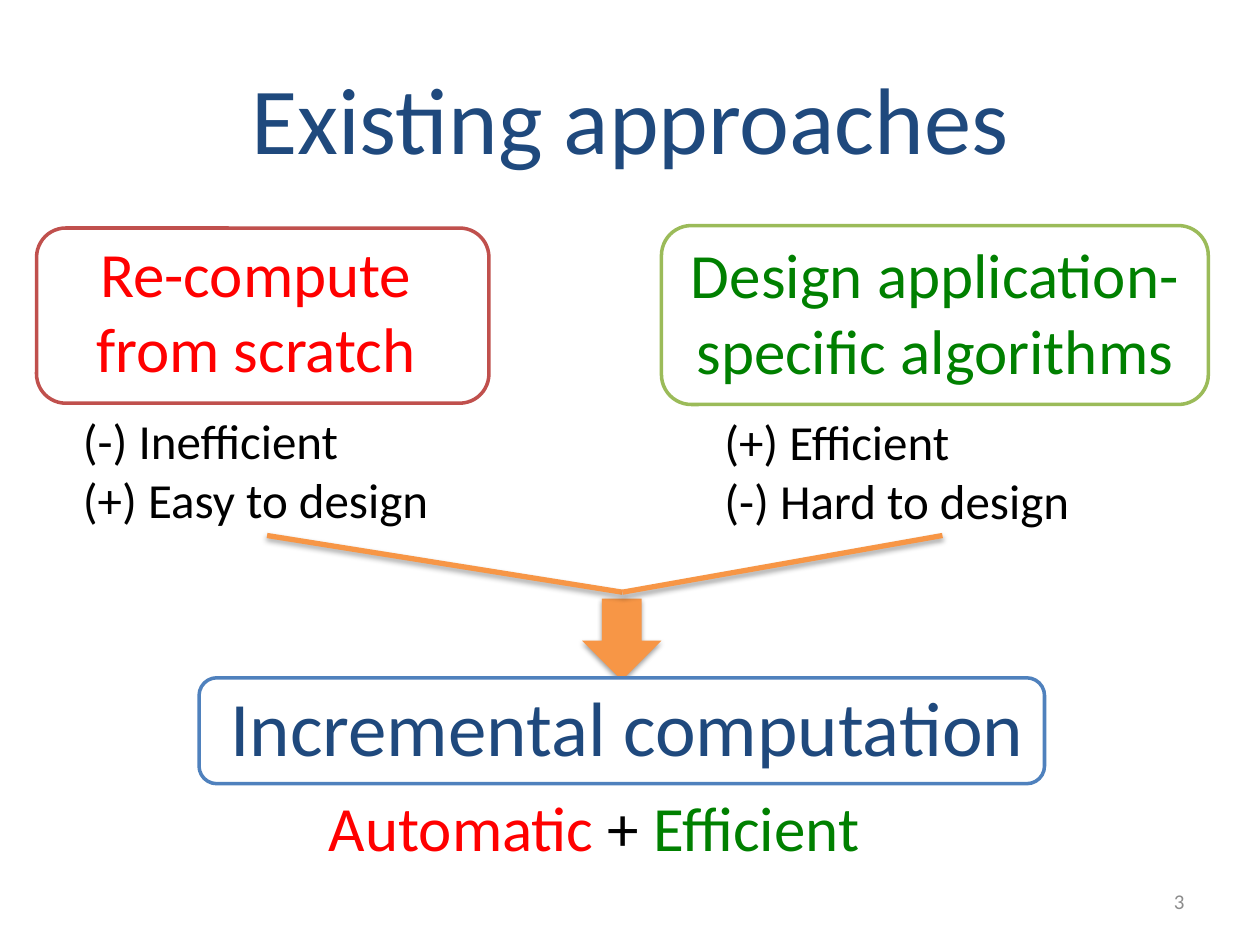
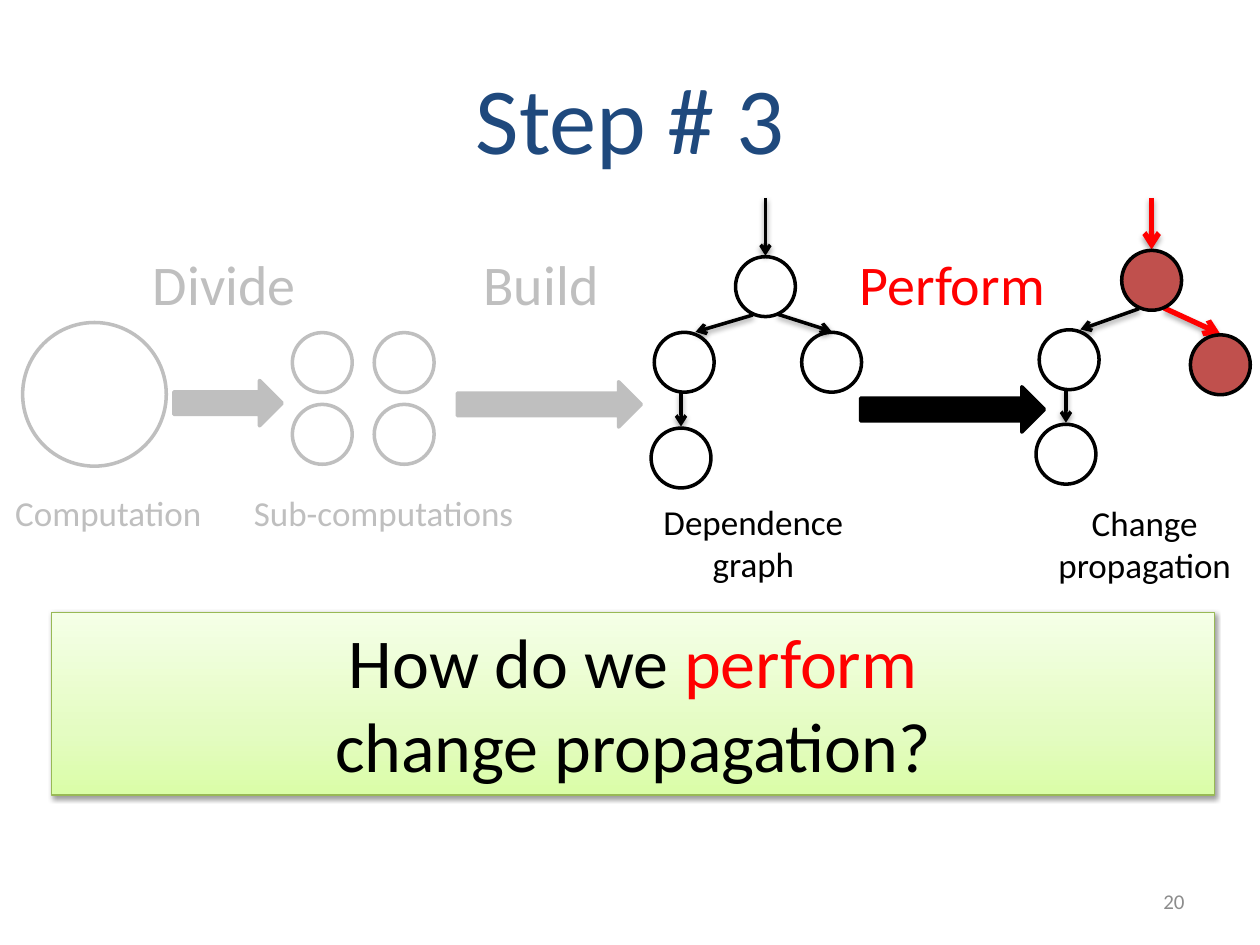
from collections import namedtuple
from itertools import product

from lxml import etree
from pptx import Presentation
from pptx.dml.color import RGBColor
from pptx.enum.shapes import MSO_CONNECTOR, MSO_SHAPE
from pptx.enum.text import MSO_ANCHOR, MSO_AUTO_SIZE, PP_ALIGN
from pptx.oxml.ns import qn
from pptx.util import Inches, Pt

COLS, ROWS = 100, 75
CELL = Inches(0.1)
FONT = "Calibri"

NAVY = RGBColor(0x1F, 0x49, 0x7D)
BLACK = RGBColor(0, 0, 0)
WHITE = RGBColor(0xFF, 0xFF, 0xFF)
RED = RGBColor(0xFF, 0, 0)
GREEN = RGBColor(0, 0x80, 0)
ORANGE = RGBColor(0xF7, 0x96, 0x46)
BRICK = RGBColor(0xC0, 0x50, 0x4D)
OLIVE = RGBColor(0x9B, 0xBB, 0x59)
MOSS = RGBColor(0x98, 0xB9, 0x55)
BLUE = RGBColor(0x4F, 0x81, 0xBD)
PALE = RGBColor(0xBF, 0xBF, 0xBF)
GRAY = RGBColor(0x8C, 0x8C, 0x8C)
LIME = ((0, "DAFDA7"), (35, "E4FCC2"), (100, "F5FFE7"))

OVAL = MSO_SHAPE.OVAL
ROUND = MSO_SHAPE.ROUNDED_RECTANGLE
RECT = MSO_SHAPE.RECTANGLE
DOWN = MSO_SHAPE.DOWN_ARROW
AHEAD = MSO_SHAPE.RIGHT_ARROW
LINE = MSO_CONNECTOR.STRAIGHT
MIDDLE = MSO_ANCHOR.MIDDLE
FIT = MSO_AUTO_SIZE.SHAPE_TO_FIT_TEXT
LEFT, CENTER, RIGHT = PP_ALIGN.LEFT, PP_ALIGN.CENTER, PP_ALIGN.RIGHT

Box = namedtuple("Box", "x y w h")


def cells(*nums):
    return [round(num * CELL) for num in nums]


def add(parent, tag, **attrs):
    return etree.SubElement(parent, qn(tag), attrs)


def shade(shape, alpha=38, dist=20000):
    props = shape.element.spPr
    effects = props.find(qn("a:effectLst"))
    if effects is None:
        effects = add(props, "a:effectLst")
    shadow = add(effects, "a:outerShdw", blurRad="40000", dist=str(dist),
                 dir="5400000", rotWithShape="0")
    color = add(shadow, "a:srgbClr", val="000000")
    add(color, "a:alpha", val=str(alpha * 1000))


def draw(slide, kind, box, fill=None, line=None, width=2):
    shape = slide.shapes.add_shape(kind, *cells(*box))
    shape.shadow.inherit = False
    if fill is None:
        shape.fill.background()
    else:
        shape.fill.solid()
        shape.fill.fore_color.rgb = fill
    if line is None:
        shape.line.fill.background()
    else:
        shape.line.color.rgb = line
        shape.line.width = Pt(width)
    return shape


def wire(slide, start, end, color=BLACK, bold=False, tip=True):
    link = slide.shapes.add_connector(LINE, *cells(*start, *end))
    link.line.color.rgb = color
    link.line.width = Pt(3 if bold else 2)
    if tip:
        add(link.line._get_or_add_ln(), "a:tailEnd", type="arrow")
    if bold:
        shade(link, 35, 23000)
    else:
        shade(link)


def fill_text(frame, lines, size, align):
    for num, runs in enumerate(lines):
        para = frame.paragraphs[0] if num == 0 else frame.add_paragraph()
        para.alignment = align
        para.font.size = Pt(size)
        para.font.name = FONT
        for words, color in runs:
            run = para.add_run()
            run.text = words
            run.font.color.rgb = color


def write(slide, box, lines, size, align=CENTER, wrap=True):
    note = slide.shapes.add_textbox(*cells(*box))
    frame = note.text_frame
    frame.word_wrap = wrap
    frame.auto_size = FIT
    fill_text(frame, lines, size, align)
    return frame


def plain(color, *lines):
    return [[(line, color)] for line in lines]


def start(deck, title, page):
    slide = deck.slides.add_slide(deck.slide_layouts[5])
    head = slide.shapes.title
    head.left, head.top, head.width, head.height = cells(5, 3, 90, 12.5)
    head.text_frame.vertical_anchor = MIDDLE
    fill_text(head.text_frame, plain(NAVY, title), 54, CENTER)
    foot = write(slide, Box(71.7, 69.5, 23.3, 4), plain(GRAY, page), 12, RIGHT)
    foot.auto_size = MSO_AUTO_SIZE.NONE
    foot.vertical_anchor = MIDDLE
    return slide


def option(slide, box, edge, name, span, points, inset):
    base = box.y + box.h
    draw(slide, ROUND, box, WHITE, edge)
    write(slide, Box(box.x, base - 13.9, span, 13.1), name, 36)
    write(slide, Box(box.x + inset, base + 0.1, 36.7, 10.4),
          plain(BLACK, *points), 28, LEFT)


def funnel(slide, box):
    mid = 49.4
    joint = mid, box.y + 4.5
    draw(slide, DOWN, Box(mid - 3.2, box.y + 5, 6.3, 6.5), ORANGE)
    shade(slide.shapes[-1])
    for side in (box.x, box.x + box.w):
        wire(slide, (side, box.y), joint, ORANGE, bold=True, tip=False)


def result(slide, box):
    draw(slide, ROUND, box, WHITE, BLUE)
    write(slide, Box(box.x - 0.5, box.y - 0.4, 69, box.h),
          plain(NAVY, "Incremental computation"), 44, wrap=False)
    traits = [("Automatic", RED), (" + ", BLACK), ("Efficient", GREEN)]
    write(slide, Box(box.x - 2.2, box.y + box.h - 0.1, box.w, 7.1),
          [traits], 36)


def choices(deck):
    slide = start(deck, "Existing approaches", "3")
    funnel(slide, Box(21.2, 42.5, 53.6, 11.5))
    option(slide, Box(2.9, 18.1, 35.9, 13.9), BRICK,
           plain(RED, "Re-compute", "from scratch"), 34.8,
           ("(-) Inefficient", "(+) Easy to design"), 2.7)
    option(slide, Box(52.5, 17.9, 43.4, 14.2), OLIVE,
           plain(GREEN, "Design application-specific algorithms"), 43.4,
           ("(+) Efficient", "(-) Hard to design"), 4)
    result(slide, Box(15.8, 53.8, 67.1, 8.4))


def label(slide, mid, top, lines, color, size=20):
    write(slide, Box(mid - 12, top, 24, 4.4 * len(lines)),
          plain(color, *lines), size)


def step(slide, box, word, shift, color, ink):
    draw(slide, AHEAD, Box(box.x, box.y + box.h - 3.6, box.w, 3.6),
         color, color)
    label(slide, box.x + box.w / 2 + shift, box.y, [word], ink, 32)


def whole(slide, box):
    draw(slide, OVAL, box, line=PALE)
    label(slide, box.x + 6.8, box.y + 12.9, ["Computation"], PALE)


def split(slide, box):
    size = 4.75
    for col, row in product(range(2), repeat=2):
        draw(slide, OVAL, Box(box.x + col * (box.w - size),
                              box.y + row * (box.h - size), size, size),
             line=PALE)
    label(slide, box.x + 7.25, box.y + 12.1, ["Sub-computations"], PALE)


def tree(slide, box, spots, hot, name, mid):
    size = 4.75
    spots = {key: (box.x + x, box.y + y) for key, (x, y) in spots.items()}
    (tx, ty), (lx, ly) = spots["top"], spots["left"]
    (rx, ry), (bx, by) = spots["right"], spots["low"]
    links = {"top": ((tx, box.y), (tx, ty - 2.45)),
             "left": ((tx - 1, ty + 2.25), (lx + 0.9, ly - 2.4)),
             "right": ((tx + 1, ty + 2.2), (rx, ry - 2.45)),
             "low": ((bx, ly + 2.35), (bx, by - 2.5))}
    for key, ends in links.items():
        wire(slide, *ends, RED if key in hot else BLACK, key in hot)
    for key, (x, y) in spots.items():
        draw(slide, OVAL, Box(x - size / 2, y - size / 2, size, size),
             BRICK if key in hot else None, BLACK)
    label(slide, box.x + mid, box.y + box.h, name, BLACK)


def ask(slide, box):
    panel = draw(slide, RECT, box, line=MOSS, width=0.75)
    panel.fill.gradient()
    panel.fill.gradient_angle = 90
    stops = panel.element.spPr.find(".//" + qn("a:gsLst"))
    for stop in list(stops):
        stops.remove(stop)
    for place, tone in LIME:
        stop = add(stops, "a:gs", pos=str(place * 1000))
        add(stop, "a:srgbClr", val=tone)
    shade(panel)
    frame = panel.text_frame
    frame.word_wrap = True
    frame.vertical_anchor = MSO_ANCHOR.TOP
    fill_text(frame, [[("How do we ", BLACK), ("perform", RED)],
                      [("change propagation?", BLACK)]], 40, CENTER)


def stages(deck):
    slide = start(deck, "Step # 3", "20")
    whole(slide, Box(1.8, 25.6, 11.4, 11.4))
    step(slide, Box(13.8, 19.3, 8.6, 14.5), "Divide", -0.3, PALE, PALE)
    split(slide, Box(23.2, 26.4, 11.25, 10.45))
    step(slide, Box(36.3, 19.3, 14.6, 14.6), "Build", -0.65, PALE, PALE)
    tree(slide, Box(51.7, 15.7, 16.7, 23.5),
         {"top": (9.05, 7.05), "left": (2.6, 13.05),
          "right": (14.3, 13.05), "low": (2.35, 20.65)},
         (), ("Dependence", "graph"), 8.1)
    step(slide, Box(68.3, 19.3, 14.6, 15), "Perform", 0, BLACK, RED)
    tree(slide, Box(82.2, 15.7, 17, 23.6),
         {"top": (9.2, 6.55), "left": (2.65, 12.85),
          "right": (14.65, 13.25), "low": (2.4, 20.35)},
         ("top", "right"), ("Change", "propagation"), 8.65)
    ask(slide, Box(4.1, 48.6, 92.3, 14.5))


def main():
    deck = Presentation()
    deck.slide_width, deck.slide_height = cells(COLS, ROWS)
    choices(deck)
    stages(deck)
    deck.save("out.pptx")


if __name__ == "__main__":
    main()
